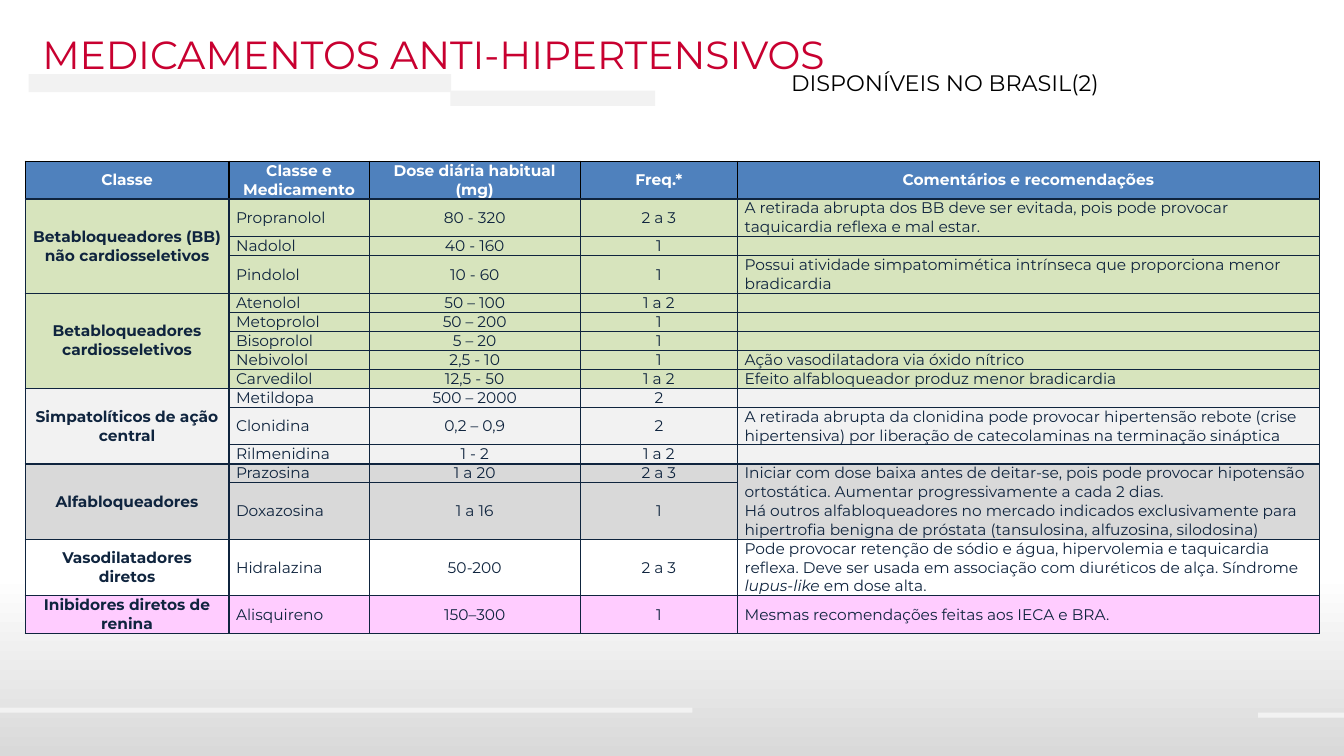
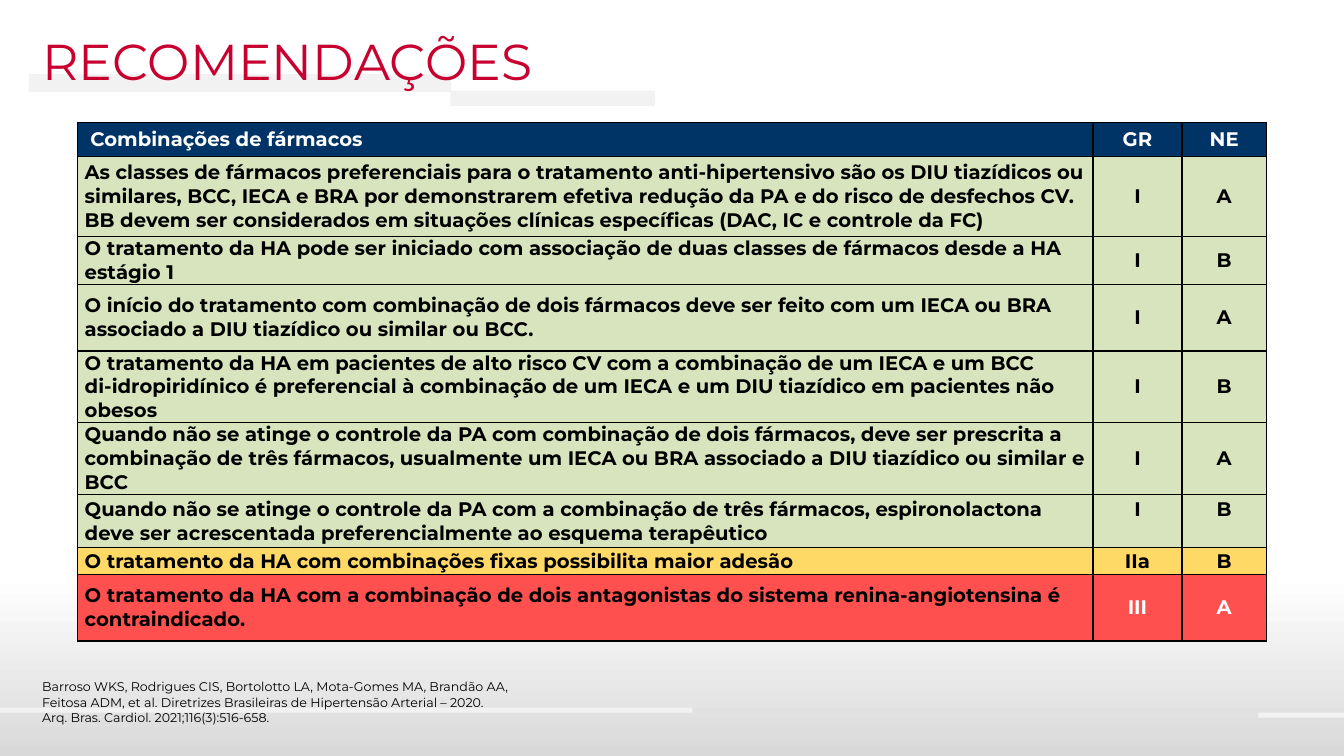
import pptx
import pptx.util
import pptx.dml.color
import pptx.enum.shapes
import pptx.enum.text
import lxml.etree

Pt = pptx.util.Pt
ALIGN = pptx.enum.text.PP_ALIGN
ANCHOR = pptx.enum.text.MSO_ANCHOR
A = "{http://schemas.openxmlformats.org/drawingml/2006/main}"

COLORS = {
    "title": "C80030", "black": "000000", "white": "FFFFFF", "band": "F2F2F2",
    "shade": "D9D9D9", "ink": "0F243E", "blue": "4F81BD", "navy": "003366",
    "green": "D7E4BD", "pink": "FFCCFF", "yellow": "FFD966", "red": "FF5050",
}


def rgb(color):
    return pptx.dml.color.RGBColor.from_string(COLORS[color])


class Deck:
    FONT = "Montserrat"

    def __init__(self):
        self.prs = pptx.Presentation()
        self.prs.slide_width, self.prs.slide_height = Pt(960), Pt(540)
        self.layout = self.prs.slide_layouts[5]
        self.slide = None

    def add_runs(self, frame, text, size, color, bold=False, align=ALIGN.LEFT):
        for number, line in enumerate(text.split("\n")):
            paragraph = frame.add_paragraph() if number else frame.paragraphs[0]
            paragraph.alignment = align
            for part, words in enumerate(line.split("_")):
                if not words:
                    continue
                run = paragraph.add_run()
                run.text = words
                run.font.name, run.font.size = self.FONT, Pt(size)
                run.font.bold, run.font.italic = bold, part % 2 == 1
                run.font.color.rgb = rgb(color)

    def new_slide(self, heading, size, height):
        self.slide = self.prs.slides.add_slide(self.layout)
        title = self.slide.shapes.title
        title.left, title.top, title.width, title.height = Pt(23), Pt(18), Pt(906.5), Pt(height)
        title.text_frame.auto_size = pptx.enum.text.MSO_AUTO_SIZE.NONE
        title.text_frame.vertical_anchor = ANCHOR.TOP
        self.add_runs(title.text_frame, heading, size, "title")

    def bar(self, left, top, width, height):
        bar = self.slide.shapes.add_shape(
            pptx.enum.shapes.MSO_SHAPE.RECTANGLE, Pt(left), Pt(top), Pt(width), Pt(height))
        bar.shadow.inherit = False
        bar.line.fill.background()
        bar.fill.solid()
        bar.fill.fore_color.rgb = rgb("band")
        return bar

    def backdrop(self):
        page = self.bar(0, 0, 960, 540)
        page.fill.gradient()
        page.fill.gradient_angle = 270
        stops = ((0.76, "white"), (1, "shade"))
        for stop, (position, color) in zip(page.fill.gradient_stops, stops):
            stop.position = position
            stop.color.rgb = rgb(color)
        bands = [
            self.bar(20.5, 52.9, 301.7, 13),
            self.bar(321.8, 64.8, 146.2, 10.8),
            self.bar(0, 505.4, 494.6, 3.6),
            self.bar(898.6, 509, 61.4, 3.6),
        ]
        for number, part in enumerate([page] + bands):
            part.element.xpath("p:nvSpPr/p:cNvPr")[0].set("id", str(20 + number))
            self.layout.shapes.element.insert(2 + number, part.element)

    def text(self, left, top, width, height, words, size):
        box = self.slide.shapes.add_textbox(Pt(left), Pt(top), Pt(width), Pt(height))
        box.text_frame.word_wrap = True
        self.add_runs(box.text_frame, words, size, "black")

    def table(self, left, top, widths, heights):
        table = self.slide.shapes.add_table(
            len(heights), len(widths), Pt(left), Pt(top), Pt(sum(widths)), Pt(sum(heights))).table
        table.first_row = table.horz_banding = False
        for column, width in zip(table.columns, widths):
            column.width = Pt(width)
        for row, height in zip(table.rows, heights):
            row.height = Pt(height)
        return table

    def cell(self, cell, text, size, fill, color, borders, bold=False, center=False, inset=5):
        cell.margin_left = cell.margin_right = Pt(inset)
        cell.margin_top = cell.margin_bottom = 0
        cell.vertical_anchor = ANCHOR.MIDDLE
        properties = cell._tc.get_or_add_tcPr()
        for side, edge in zip("LRTB", borders):
            line = lxml.etree.SubElement(properties, f"{A}ln{side}", w=str(Pt(1)))
            solid = lxml.etree.SubElement(line, f"{A}solidFill")
            lxml.etree.SubElement(solid, f"{A}srgbClr", val=COLORS[edge])
        cell.fill.solid()
        cell.fill.fore_color.rgb = rgb(fill)
        if text:
            self.add_runs(cell.text_frame, text, size, color, bold, ALIGN.CENTER if center else ALIGN.LEFT)
        else:
            lxml.etree.SubElement(cell.text_frame.paragraphs[0]._p, f"{A}endParaRPr", sz=str(size * 100))


DRUG_HEADINGS = ["Classe", "Classe e Medicamento", "Dose diária habitual (mg)", "Freq.*",
                 "Comentários e recomendações"]
DRUG_CLASSES = [
    ("Betabloqueadores (BB) não cardiosseletivos", "green", [
        (2, "Propranolol", "80 - 320", "2 a 3",
         "A retirada abrupta dos BB deve ser evitada, pois pode provocar taquicardia reflexa e mal estar."),
        (1, "Nadolol", "40 - 160", "1", ""),
        (2, "Pindolol", "10 - 60", "1",
         "Possui atividade simpatomimética intrínseca que proporciona menor bradicardia")]),
    ("Betabloqueadores cardiosseletivos", "green", [
        (1, "Atenolol", "50 – 100", "1 a 2", ""),
        (1, "Metoprolol", "50 – 200", "1", ""),
        (1, "Bisoprolol", "5 – 20", "1", ""),
        (1, "Nebivolol", "2,5 - 10", "1", "Ação vasodilatadora via óxido nítrico"),
        (1, "Carvedilol", "12,5 - 50", "1 a 2", "Efeito alfabloqueador produz menor bradicardia")]),
    ("Simpatolíticos de ação central", "band", [
        (1, "Metildopa", "500 – 2000", "2", ""),
        (2, "Clonidina", "0,2 – 0,9", "2",
         "A retirada abrupta da clonidina pode provocar hipertensão rebote (crise hipertensiva) "
         "por liberação de catecolaminas na terminação sináptica"),
        (1, "Rilmenidina", "1 - 2", "1 a 2", "")]),
    ("Alfabloqueadores", "shade", [
        (1, "Prazosina", "1 a 20", "2 a 3",
         "Iniciar com dose baixa antes de deitar-se, pois pode provocar hipotensão ortostática. "
         "Aumentar progressivamente a cada 2 dias.\n"
         "Há outros alfabloqueadores no mercado indicados exclusivamente para hipertrofia benigna "
         "de próstata (tansulosina, alfuzosina, silodosina)"),
        (3, "Doxazosina", "1 a 16", "1", None)]),
    ("Vasodilatadores diretos", "white", [
        (3, "Hidralazina", "50-200", "2 a 3",
         "Pode provocar retenção de sódio e água, hipervolemia e taquicardia reflexa. Deve ser usada "
         "em associação com diuréticos de alça. Síndrome _lupus-like_ em dose alta.")]),
    ("Inibidores diretos de renina", "pink", [
        (2, "Alisquireno", "150–300", "1", "Mesmas recomendações feitas aos IECA e BRA.")]),
]

RECOMMENDATIONS = [
    (57.6, "green", "I", "A",
     "As classes de fármacos preferenciais para o tratamento anti-hipertensivo são os DIU tiazídicos ou "
     "similares, BCC, IECA e BRA por demonstrarem efetiva redução da PA e do risco de desfechos CV. "
     "BB devem ser considerados em situações clínicas específicas (DAC, IC e controle da FC)"),
    (34.1, "green", "I", "B",
     "O tratamento da HA pode ser iniciado com associação de duas classes de fármacos desde a HA estágio 1"),
    (47.5, "green", "I", "A",
     "O início do tratamento com combinação de dois fármacos deve ser feito com um IECA ou BRA "
     "associado a DIU tiazídico ou similar ou BCC."),
    (51.2, "green", "I", "B",
     "O tratamento da HA em pacientes de alto risco CV com a combinação de um IECA e um BCC\n"
     "di-idropiridínico é preferencial à combinação de um IECA e um DIU tiazídico em pacientes não obesos"),
    (51.2, "green", "I", "A",
     "Quando não se atinge o controle da PA com combinação de dois fármacos, deve ser prescrita a "
     "combinação de três fármacos, usualmente um IECA ou BRA associado a DIU tiazídico ou similar e BCC"),
    (38.2, "green", "I", "B",
     "Quando não se atinge o controle da PA com a combinação de três fármacos, espironolactona "
     "deve ser acrescentada preferencialmente ao esquema terapêutico"),
    (19.1, "yellow", "IIa", "B", "O tratamento da HA com combinações fixas possibilita maior adesão"),
    (47.5, "red", "III", "A",
     "O tratamento da HA com a combinação de dois antagonistas do sistema renina-angiotensina é "
     "contraindicado."),
]


def drugs_slide(deck):
    deck.new_slide("MEDICAMENTOS ANTI-HIPERTENSIVOS", 28, 41)
    deck.backdrop()
    line = 13.4
    lines = [2] + [drug[0] for _, _, drugs in DRUG_CLASSES for drug in drugs]
    table = deck.table(18, 115.2, [145.6, 100.2, 150.7, 112.4, 415.6], [line * count for count in lines])
    for column, heading in enumerate(DRUG_HEADINGS):
        deck.cell(table.cell(0, column), heading, 11, "blue", "white",
                  ["black"] * 3 + ["ink"], bold=True, center=True, inset=3.6)
    row = 1
    for name, fill, drugs in DRUG_CLASSES:
        first = row
        for _, *details in drugs:
            for column, text in enumerate([name if row == first else None] + details):
                deck.cell(table.cell(row, column), text, 11, fill, "ink", ["ink"] * 4,
                          bold=column == 0, center=column in (0, 2, 3))
            if details[-1] is None:
                table.cell(row - 1, 4).merge(table.cell(row, 4))
            row += 1
        if row - first > 1:
            table.cell(first, 0).merge(table.cell(row - 1, 0))
    deck.text(558, 46, 334, 26.6, "DISPONÍVEIS NO BRASIL(2)", 16)


def recommendations_slide(deck):
    deck.new_slide("RECOMENDAÇÕES", 36, 51)
    header = (23.8, "navy", "GR", "NE", "Combinações de fármacos")
    entries = [header] + RECOMMENDATIONS
    table = deck.table(55.5, 87.8, [725.2, 63.6, 60.4], [entry[0] for entry in entries])
    for row, (_, fill, grade, evidence, advice) in enumerate(entries):
        for column, text in enumerate((advice, grade, evidence)):
            white = fill == "navy" or (fill == "red" and column)
            deck.cell(table.cell(row, column), text, 14, fill, "white" if white else "black",
                      ["black"] * 4, bold=True, center=column > 0)
    table.cell(0, 0).margin_left = Pt(9)
    for column in (1, 2):
        raised = table.cell(6, column)
        raised.vertical_anchor, raised.margin_top = ANCHOR.TOP, Pt(2)
    deck.text(23, 481.7, 481.7, 40.3,
              "Barroso WKS, Rodrigues CIS, Bortolotto LA, Mota-Gomes MA, Brandão AA,\n"
              "Feitosa ADM, et al. Diretrizes Brasileiras de Hipertensão Arterial – 2020.\n"
              "Arq. Bras. Cardiol. 2021;116(3):516-658.", 9)


def main():
    deck = Deck()
    drugs_slide(deck)
    recommendations_slide(deck)
    deck.prs.save("out.pptx")


if __name__ == "__main__":
    main()
